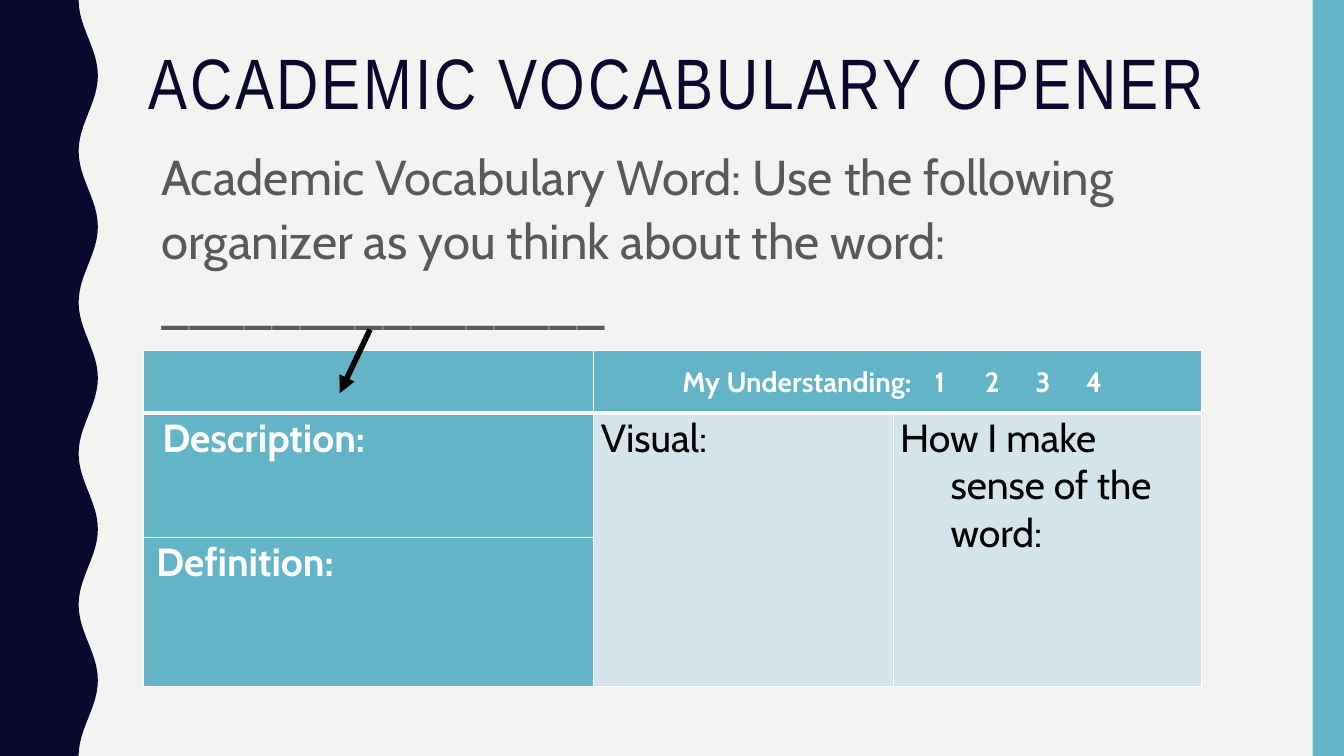
from dataclasses import dataclass
from math import cos, pi

from pptx import Presentation
from pptx.dml.color import RGBColor
from pptx.enum.shapes import MSO_CONNECTOR as Connector, MSO_SHAPE as Preset
from pptx.enum.text import MSO_ANCHOR as Anchor, MSO_AUTO_SIZE as AutoSize, PP_ALIGN as Align
from pptx.oxml.ns import qn
from pptx.util import Inches, Pt
from lxml.etree import SubElement


@dataclass(frozen=True)
class Theme:
    paper: str = "F3F3F2"
    navy: str = "0B082E"
    teal: str = "62B4C6"
    pale: str = "D3E5EA"
    grey: str = "595959"
    white: str = "FFFFFF"
    black: str = "000000"
    heading_font: str = "Arial Narrow"
    body_font: str = "Cabin"
    title_size: int = 51
    lead_size: int = 35
    cell_size: int = 28
    scale_size: int = 20


def assign(target, values):
    for name, value in values.items():
        setattr(target, name, value)


def paint(fill, color):
    fill.solid()
    fill.fore_color.rgb = RGBColor.from_string(color)


class VocabularySlide:
    """Places elements by percent of the slide's width and height."""

    def __init__(self, presentation, theme):
        self.theme = theme
        self.width = presentation.slide_width
        self.height = presentation.slide_height
        self.slide = presentation.slides.add_slide(presentation.slide_layouts[1])
        self.shapes = self.slide.shapes
        paint(self.slide.background.fill, theme.paper)

    def x(self, percent):
        return round(self.width * percent / 100)

    def y(self, percent):
        return round(self.height * percent / 100)

    def box(self, left, top, width, height):
        return self.x(left), self.y(top), self.x(width), self.y(height)

    def add_text(self, frame, text, color, font, paragraph_format):
        paragraph = frame.paragraphs[0]
        assign(paragraph, paragraph_format)
        run = paragraph.add_run()
        run.text = text
        assign(run.font, font)
        run.font.color.rgb = RGBColor.from_string(color)
        return paragraph, run

    def indent(self, paragraph, margin=0, first_line=0):
        properties = paragraph._p.get_or_add_pPr()
        properties.set("marL", str(Inches(margin)))
        properties.set("indent", str(Inches(first_line)))
        SubElement(properties, qn("a:buNone"))
        return properties

    def placeholder(self, index, box, text, color, font, paragraph_format):
        shape = self.shapes.placeholders[index]
        assign(shape, dict(zip(("left", "top", "width", "height"), self.box(*box))))
        assign(shape.text_frame, {"auto_size": AutoSize.NONE, "word_wrap": True,
                                  "vertical_anchor": Anchor.TOP})
        paragraph, run = self.add_text(shape.text_frame, text, color, font,
                                       {"alignment": Align.LEFT, **paragraph_format})
        self.indent(paragraph)
        return run

    def finish(self, shape, color):
        shape.shadow.inherit = False
        paint(shape.fill, color)
        shape.line.fill.background()

    def band(self, box, color):
        self.finish(self.shapes.add_shape(Preset.RECTANGLE, *self.box(*box)), color)

    def wavy_band(self, inner, outer, waves, color, steps=24):
        """Band along the left edge whose right side is a cosine wave."""
        middle, swing = (inner + outer) / 2, (outer - inner) / 2
        count = waves * steps
        edge = [(self.x(middle - swing * cos(2 * pi * step / steps)),
                 self.y(100 * step / count)) for step in range(count + 1)]
        builder = self.shapes.build_freeform(0, 0)
        builder.add_line_segments(edge + [(0, self.height)], close=True)
        self.finish(builder.convert_to_shape(), color)

    def arrow(self, start, end, color, weight):
        line = self.shapes.add_connector(Connector.STRAIGHT, self.x(start[0]), self.y(start[1]),
                                         self.x(end[0]), self.y(end[1]))
        line.line.color.rgb = RGBColor.from_string(color)
        line.line.width = Pt(weight)
        SubElement(line.line._get_or_add_ln(), qn("a:tailEnd"), type="triangle")
        SubElement(line._element.spPr, qn("a:effectLst"))

    def table(self, left, top, columns, rows):
        frame = self.shapes.add_table(len(rows), len(columns),
                                      *self.box(left, top, sum(columns), sum(rows)))
        table = frame.table
        assign(table, {"first_row": False, "horz_banding": False})
        for column, share in zip(table.columns, columns):
            column.width = self.x(share)
        for row, share in zip(table.rows, rows):
            row.height = self.y(share)
        return table

    def style_cell(self, cell, fill, heavy_side=None):
        properties = cell._tc.get_or_add_tcPr()
        for side in ("lnL", "lnR", "lnT", "lnB"):
            weight = Pt(3 if side == heavy_side else 1)
            border = SubElement(properties, qn(f"a:{side}"), w=str(weight))
            solid = SubElement(border, qn("a:solidFill"))
            SubElement(solid, qn("a:srgbClr"), val=self.theme.white)
        paint(cell.fill, fill)
        assign(cell, {"margin_left": Inches(0.07), "margin_right": Inches(0.07),
                      "margin_top": Inches(0.01), "margin_bottom": 0})

    def cell_text(self, cell, text, color, bold, first_line):
        font = {"name": self.theme.body_font, "size": Pt(self.theme.cell_size), "bold": bold}
        paragraph, _ = self.add_text(cell.text_frame, text, color, font, {})
        self.indent(paragraph, 0.5, first_line)

    def rating_text(self, cell, label, ratings, first_stop, step):
        """Label followed by ratings on equally spaced tab stops."""
        assign(cell, {"vertical_anchor": Anchor.MIDDLE, "margin_left": Inches(0.88)})
        font = {"name": self.theme.body_font, "size": Pt(self.theme.scale_size), "bold": True}
        paragraph, _ = self.add_text(cell.text_frame, "\t".join([label, *ratings]),
                                     self.theme.white, font, {"alignment": Align.LEFT})
        stops = SubElement(self.indent(paragraph), qn("a:tabLst"))
        for number in range(len(ratings)):
            SubElement(stops, qn("a:tab"), pos=str(Inches(first_stop + number * step)), algn="l")


def main():
    theme = Theme()
    presentation = Presentation()
    assign(presentation, {"slide_width": Inches(13.33), "slide_height": Inches(7.5)})
    page = VocabularySlide(presentation, theme)

    page.wavy_band(5.85, 7.28, 5, theme.navy)
    page.band((97.67, 0, 2.33, 100), theme.teal)
    title = page.placeholder(
        0, (10.28, 5.6, 83.5, 21.73), "ACADEMIC VOCABULARY OPENER", theme.navy,
        {"name": theme.heading_font, "size": Pt(theme.title_size)}, {"line_spacing": 0.9})
    title._r.get_or_add_rPr().set("spc", "200")
    page.placeholder(
        1, (11.25, 17.87, 77.57, 42.27),
        "Academic Vocabulary Word: Use the following organizer as you think about the word: "
        "________________", theme.grey,
        {"name": theme.body_font, "size": Pt(theme.lead_size)},
        {"line_spacing": 1.1, "space_before": Pt(7)})

    organizer = page.table(10.65, 46.4, (33.53, 22.28, 22.96), (8.27, 16.4, 19.73))
    heavy_sides = ("lnB", "lnT", None)
    for row, heavy_side in enumerate(heavy_sides):
        for column in range(3):
            fill = theme.pale if row and column else theme.teal
            page.style_cell(organizer.cell(row, column), fill, heavy_side)
    for first, last in (((0, 1), (0, 2)), ((1, 1), (2, 1)), ((1, 2), (2, 2))):
        organizer.cell(*first).merge(organizer.cell(*last))

    page.rating_text(organizer.cell(0, 1), "My Understanding:", "1234", 2.63, 0.51)
    for place, text, color, bold, first_line in (
            ((1, 0), "Description:", theme.white, True, -0.38),
            ((2, 0), "Definition:", theme.white, True, -0.44),
            ((1, 1), "Visual:", theme.black, False, -0.5),
            ((1, 2), "How I make sense of the word:", theme.black, False, -0.5)):
        page.cell_text(organizer.cell(*place), text, color, bold, first_line)

    page.arrow((27.53, 43.6), (25.28, 52), theme.black, 4)
    presentation.save("out.pptx")


if __name__ == "__main__":
    main()
